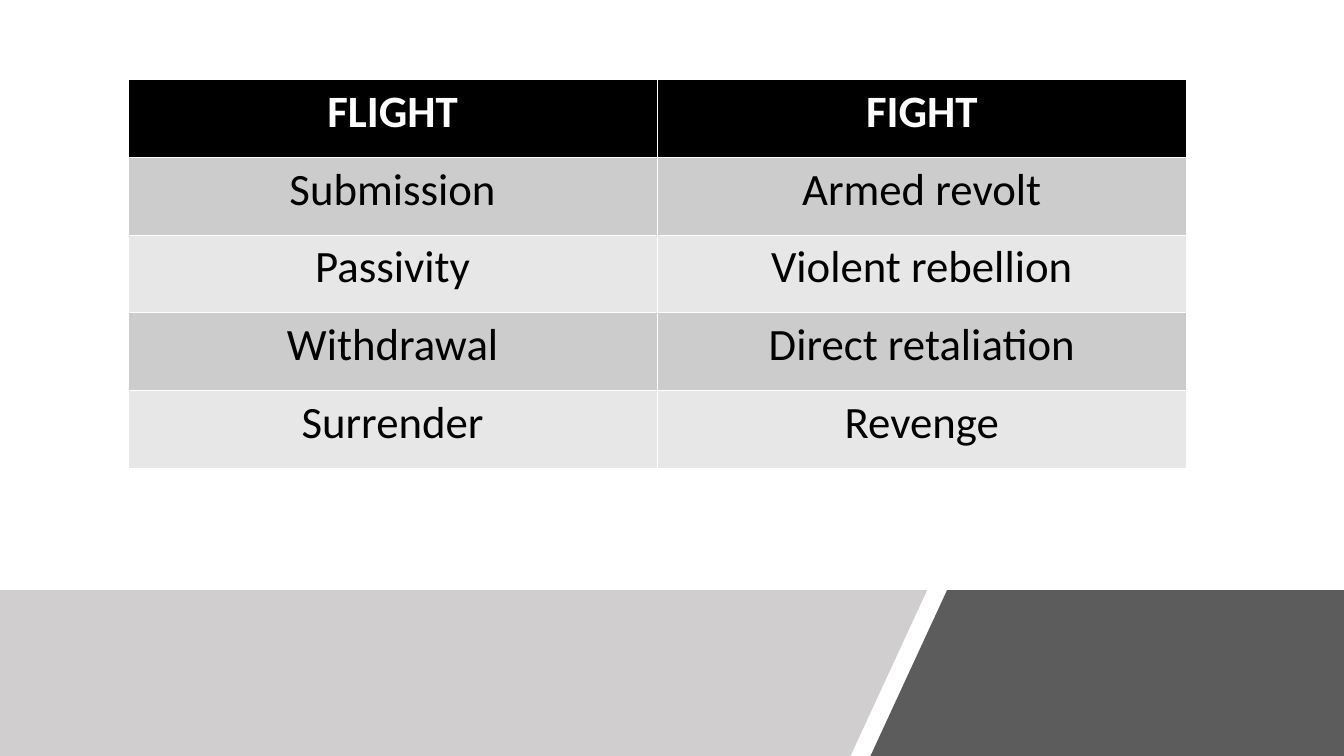
from pptx import Presentation
from pptx.dml.color import RGBColor
from pptx.enum.text import PP_ALIGN
from pptx.oxml import parse_xml
from pptx.oxml.ns import nsdecls
from pptx.util import Pt

PX = 9525
WIDTH, HEIGHT = 1280, 720
BAND_TOP = 562
SLANT = 73

RESPONSES = [
    ("FLIGHT", "FIGHT"),
    ("Submission", "Armed revolt"),
    ("Passivity", "Violent rebellion"),
    ("Withdrawal", "Direct retaliation"),
    ("Surrender", "Revenge"),
]


def set_fill(fill, color):
    fill.solid()
    fill.fore_color.rgb = RGBColor.from_string(color)


def add_polygon(slide, points, color):
    builder = slide.shapes.build_freeform(*points[0], scale=PX)
    builder.add_line_segments(points[1:], close=True)
    shape = builder.convert_to_shape()
    shape.shadow.inherit = False
    shape.line.fill.background()
    set_fill(shape.fill, color)
    return shape


def add_footer_band(slide, left, top, right, bottom):
    """Draw two panels parted by a slanted gap."""
    light_edge, dark_edge = left + 883, left + 902
    add_polygon(slide, [(left, top), (light_edge, top),
                        (light_edge - SLANT, bottom), (left, bottom)], "D0CECE")
    dark = add_polygon(slide, [(dark_edge, top), (right, top), (right, bottom),
                               (dark_edge - SLANT, bottom)], "404040")
    dark.fill.fore_color._xFill[0].append(
        parse_xml(f'<a:alpha {nsdecls("a")} val="85000"/>'))


def add_response_table(slide, left, top, width, height):
    """The default table style supplies the white cell borders."""
    frame = slide.shapes.add_table(len(RESPONSES), 2, left * PX, top * PX,
                                   width * PX, height * PX)
    for row_index, row in enumerate(RESPONSES):
        header = row_index == 0
        band = "CCCCCC" if row_index % 2 else "E7E7E7"
        for column_index, text in enumerate(row):
            cell = frame.table.cell(row_index, column_index)
            set_fill(cell.fill, "000000" if header else band)
            cell.text = text
            para = cell.text_frame.paragraphs[0]
            para.alignment = PP_ALIGN.CENTER
            para.font.name = "Calibri"
            para.font.size = Pt(32)
            para.font.bold = header
            para.font.color.rgb = RGBColor.from_string("FFFFFF" if header else "000000")


def main():
    deck = Presentation()
    deck.slide_width, deck.slide_height = WIDTH * PX, HEIGHT * PX
    slide = deck.slides.add_slide(deck.slide_layouts[6])
    add_footer_band(slide, 0, BAND_TOP, WIDTH, HEIGHT)
    add_response_table(slide, 122, 76, 1008, 370)
    deck.save("out.pptx")


if __name__ == "__main__":
    main()
